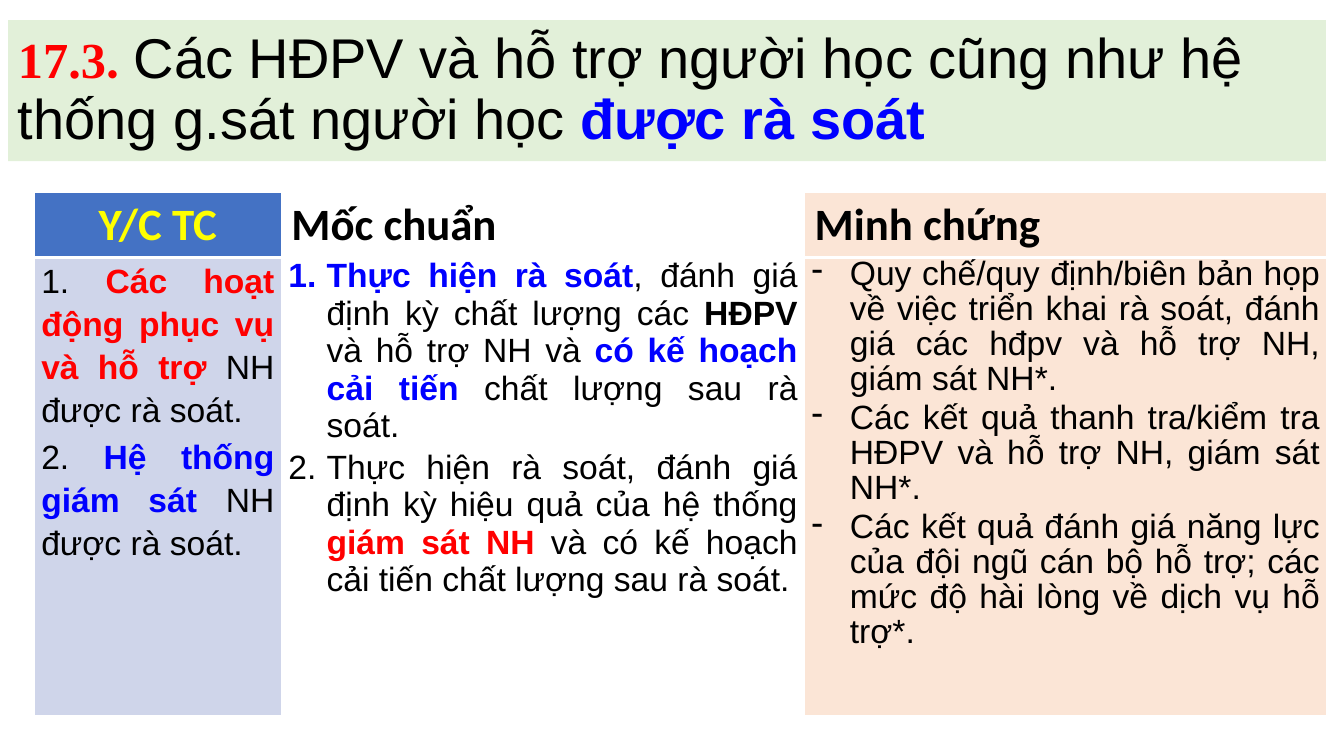
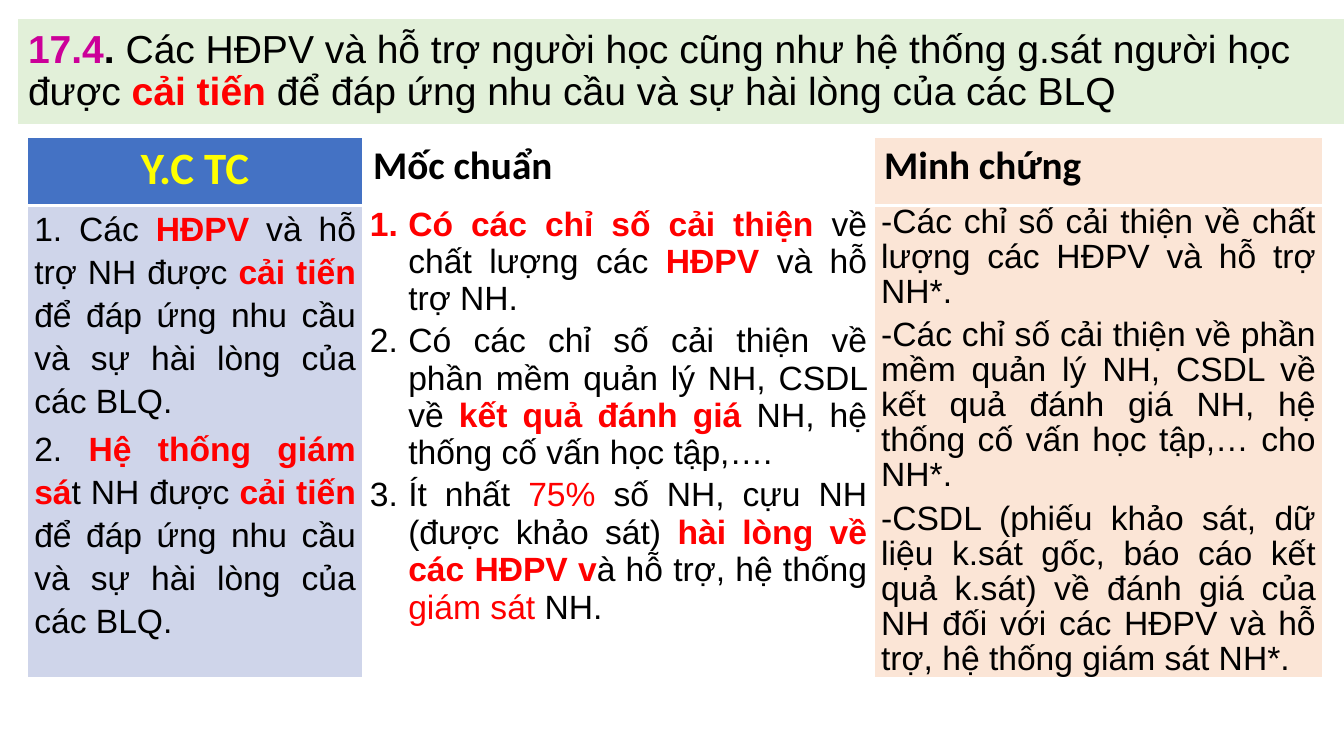
from typing import NamedTuple, Optional

from lxml import etree
from pptx import Presentation
from pptx.dml.color import RGBColor
from pptx.enum.shapes import MSO_SHAPE
from pptx.enum.text import MSO_ANCHOR, PP_ALIGN
from pptx.oxml.ns import qn
from pptx.util import Inches, Pt

RECT = MSO_SHAPE.RECTANGLE
MIDDLE = MSO_ANCHOR.MIDDLE
LEFT, CENTER, JUSTIFY = PP_ALIGN.LEFT, PP_ALIGN.CENTER, PP_ALIGN.JUSTIFY

COLORS = {
    "black": "000000", "white": "FFFFFF", "red": "FF0000", "blue": "0000FF",
    "magenta": "CC0099", "yellow": "FFFF00", "band": "E2F0D9",
    "header": "4472C4", "requirement": "CFD5EA", "evidence": "FBE5D6",
}
BODY_SIZE = 24
HANGING = 0.38


class Run(NamedTuple):
    text: str
    color: str = "black"
    bold: bool = False
    size: float = BODY_SIZE
    font: str = "Arial"
    italic: bool = False


class Column(NamedTuple):
    heading: Run
    width: float
    paragraphs: list[list[Run]]


class ColumnStyle(NamedTuple):
    header_fill: str
    body_fill: str
    align: PP_ALIGN
    line_spacing: object = None


class CriterionSlide(NamedTuple):
    band: tuple[float, float, float, float]
    title: list[Run]
    table_at: tuple[float, float]
    row_heights: tuple[float, float]
    columns: list[Column]
    evidence_bullet: Optional[str] = None
    evidence_after: float = 0


# Requirement, benchmark and evidence columns
COLUMN_STYLES = (
    ColumnStyle("header", "requirement", CENTER, 1.15),
    ColumnStyle("white", "white", LEFT),
    ColumnStyle("evidence", "evidence", LEFT, Pt(25)),
)


def rgb(name: str) -> RGBColor:
    return RGBColor.from_string(COLORS[name])


def key(text: str, color: str = "red", **fmt) -> Run:
    """A bold coloured run."""
    return Run(text, color, True, **fmt)


def heading(text: str, color: str = "black", size: float = 32) -> Run:
    return Run(text, color, True, size, "Calibri")


def add_bullet(p, bullet: str) -> None:
    pPr = p._p.get_or_add_pPr()
    pPr.set("marL", str(Inches(HANGING)))
    pPr.set("indent", str(-Inches(HANGING)))
    if bullet == "1.":
        etree.SubElement(pPr, qn("a:buAutoNum"), type="arabicPeriod")
    else:
        etree.SubElement(pPr, qn("a:buChar"), char=bullet)


def write(tf, paragraphs: list[list[Run]], *, align=LEFT, line_spacing=None,
          before: float = 0, after: float = 0, bullet: Optional[str] = None) -> None:
    tf.word_wrap = True
    for i, runs in enumerate(paragraphs):
        p = tf.add_paragraph() if i else tf.paragraphs[0]
        p.alignment = align
        if line_spacing is not None:
            p.line_spacing = line_spacing
        p.space_before, p.space_after = Pt(before), Pt(after)
        if bullet:
            add_bullet(p, bullet)
        for run in runs:
            r = p.add_run()
            r.text = run.text
            r.font.name, r.font.size = run.font, Pt(run.size)
            r.font.bold, r.font.italic = run.bold, run.italic
            r.font.color.rgb = rgb(run.color)


def style_cell(cell, fill: str, top: float, bottom: float) -> None:
    """Fill a cell and give it white borders of the given widths."""
    cell.fill.solid()
    cell.fill.fore_color.rgb = rgb(fill)
    tcPr = cell._tc.get_or_add_tcPr()
    for i, (side, width) in enumerate(zip("LRTB", (1, 1, top, bottom))):
        ln = etree.Element(qn(f"a:ln{side}"), w=str(Pt(width)))
        line_fill = etree.SubElement(ln, qn("a:solidFill"))
        etree.SubElement(line_fill, qn("a:srgbClr"), val=COLORS["white"])
        tcPr.insert(i, ln)


def add_title_band(s, spec_: CriterionSlide) -> None:
    sp = s.shapes.add_shape(RECT, *map(Inches, spec_.band))
    sp.shadow.inherit = False
    sp.fill.solid()
    sp.fill.fore_color.rgb = rgb("band")
    sp.line.fill.background()
    sp.text_frame.vertical_anchor = MIDDLE
    write(sp.text_frame, [spec_.title], line_spacing=0.9)


def add_criterion_table(s, item: CriterionSlide) -> None:
    width = sum(col.width for col in item.columns)
    table = s.shapes.add_table(
        2, len(item.columns), *map(Inches, item.table_at),
        Inches(width), Inches(sum(item.row_heights))).table
    table.first_row = table.horz_banding = False
    for row, height in zip(table.rows, item.row_heights):
        row.height = Inches(height)
    bullets = (None, "1.", item.evidence_bullet)
    afters = (0, 0, item.evidence_after)
    for i, (col, style) in enumerate(zip(item.columns, COLUMN_STYLES)):
        table.columns[i].width = Inches(col.width)
        head, body = table.cell(0, i), table.cell(1, i)
        style_cell(head, style.header_fill, 1, 3)
        write(head.text_frame, [[col.heading]], align=style.align)
        style_cell(body, style.body_fill, 3, 1)
        body.margin_left = body.margin_right = Inches(0.07)
        body.margin_top = body.margin_bottom = 0
        write(body.text_frame, col.paragraphs, align=JUSTIFY, before=3,
              line_spacing=style.line_spacing, after=afters[i], bullet=bullets[i])


SLIDES = (
    CriterionSlide(
        band=(0.08, 0.2, 13.07, 1.4),
        title=[
            key("17.3", size=36, font="Times New Roman"),
            key(". ", size=40, font="Calibri", italic=True),
            Run("Các HĐPV và hỗ trợ người học cũng như hệ thống g.sát người học ", size=40),
            key("được rà soát", "blue", size=40),
        ],
        table_at=(0.34, 1.91),
        row_heights=(0.64, 4.55),
        columns=[
            Column(heading("Y/C TC", "yellow"), 2.45, [
                [Run("1. "), key("Các hoạt động phục vụ và hỗ trợ "),
                 Run("NH được rà soát.")],
                [Run("2. "), key("Hệ thống giám sát ", "blue"),
                 Run("NH được rà soát.")],
            ]),
            Column(heading("Mốc chuẩn"), 5.19, [
                [key("Thực hiện rà soát", "blue"),
                 Run(", đánh giá định kỳ chất lượng các "), key("HĐPV ", "black"),
                 Run("và hỗ trợ NH và "), key("có kế hoạch cải tiến ", "blue"),
                 Run("chất lượng sau rà soát.")],
                [Run("Thực hiện rà soát, đánh giá định kỳ hiệu quả của hệ thống "),
                 key("giám sát NH "),
                 Run("và có kế hoạch cải tiến chất lượng sau rà soát.")],
            ]),
            Column(heading("Minh chứng"), 5.18, [
                [Run("Quy chế/quy định/biên bản họp về việc triển khai rà soát, "
                     "đánh giá các hđpv và hỗ trợ NH, giám sát NH*.")],
                [Run("Các kết quả thanh tra/kiểm tra HĐPV và hỗ trợ NH, giám sát NH*.")],
                [Run("Các kết quả đánh giá năng lực của đội ngũ cán bộ hỗ trợ; "
                     "các mức độ hài lòng về dịch vụ hỗ trợ*.")],
            ]),
        ],
        evidence_bullet="-",
    ),
    CriterionSlide(
        band=(0.18, 0.19, 13.15, 1.04),
        title=[
            key("17.4", "magenta", size=27.9),
            key(". ", "black", size=27.9),
            Run("Các HĐPV và hỗ trợ người học cũng như hệ thống g.sát người học được ",
                size=27.9),
            key("cải tiến ", size=27.9),
            Run("để đáp ứng nhu cầu và sự hài lòng của các BLQ", size=27.9),
        ],
        table_at=(0.27, 1.36),
        row_heights=(0.68, 4.68),
        columns=[
            Column(heading("Y.C TC", "yellow"), 3.33, [
                [Run("1. Các "), key("HĐPV "), Run("và hỗ trợ NH được "),
                 key("cải tiến "),
                 Run("để đáp ứng nhu cầu và sự hài lòng của các BLQ.")],
                [Run("2. "), key("Hệ thống giám sá"), Run("t NH được "),
                 key("cải tiến "),
                 Run("để đáp ứng nhu cầu và sự hài lòng của các BLQ.")],
            ]),
            Column(heading("Mốc chuẩn", size=28), 5.07, [
                [key("Có các chỉ số cải thiện "), Run("về chất lượng các "),
                 key("HĐPV "), Run("và hỗ trợ NH.")],
                [Run("Có các chỉ số cải thiện về phần mềm quản lý NH, CSDL về "),
                 key("kết quả đánh giá "), Run("NH, hệ thống cố vấn học tập,….")],
                [Run("Ít nhất "), Run("75% ", "red"),
                 Run("số NH, cựu NH (được khảo sát) "),
                 key("hài lòng về các HĐPV v"), Run("à hỗ trợ, hệ thống "),
                 Run("giám sát ", "red"), Run("NH.")],
            ]),
            Column(heading("Minh chứng", size=28), 4.45, [
                [Run("-Các chỉ số cải thiện về chất lượng các HĐPV và hỗ trợ NH*.")],
                [Run("-Các chỉ số cải thiện về phần mềm quản lý NH, CSDL về kết quả "
                     "đánh giá NH, hệ thống cố vấn học tập,… cho NH*.")],
                [Run("-CSDL (phiếu khảo sát, dữ liệu k.sát gốc, báo cáo kết quả k.sát) "
                     "về đánh giá của NH đối với các HĐPV và hỗ trợ, "
                     "hệ thống giám sát NH*.")],
            ]),
        ],
        evidence_after=3,
    ),
)


def main() -> None:
    prs = Presentation()
    prs.slide_width, prs.slide_height = Inches(13.33), Inches(7.5)
    for item in SLIDES:
        s = prs.slides.add_slide(prs.slide_layouts[6])
        add_title_band(s, item)
        add_criterion_table(s, item)
    prs.save("out.pptx")


if __name__ == "__main__":
    main()
